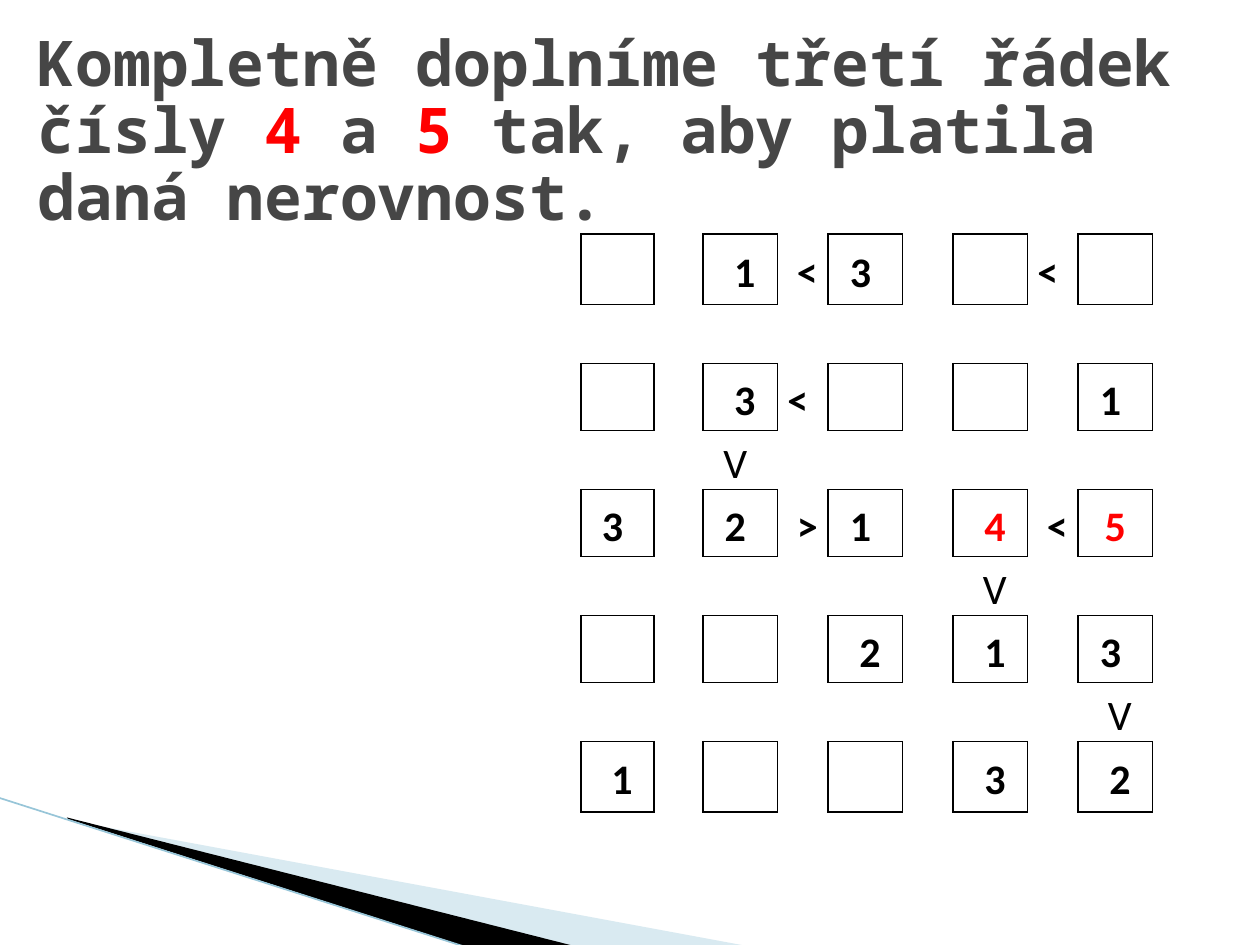
from lxml.etree import SubElement
from pptx import Presentation
from pptx.dml.color import RGBColor
from pptx.enum.shapes import MSO_CONNECTOR as Connector
from pptx.enum.text import MSO_ANCHOR as Anchor, PP_ALIGN as Align
from pptx.oxml.ns import qn
from pptx.util import Cm, Pt

TITLE = [("Kompletně doplníme třetí řádek čísly ", "464646"), ("4", "FF0000"), (" a ", "464646"),
         ("5", "FF0000"), (" tak, aby platila daná nerovnost.", "464646")]
GRID = [
    ["", "", " 1", " <", "3 ", "", "", "< ", ""],
    ["", "", "", "", "", "", "", "", ""],
    ["", "", " 3", "< ", "", "", "", "", "1 "],
    ["", "", "V ", "", "", "", "", "", ""],
    ["3 ", "", "2 ", " >", "1 ", "", " 4", " <", "5"],
    ["", "", "", "", "", "", " V", "", ""],
    ["", "", "", "", " 2", "", " 1", "", "3 "],
    ["", "", "", "", "", "", "", "", " V"],
    [" 1", "", "", "", "", "", " 3", "", " 2"],
]
ADDED = {"4", "5"}
COLUMNS = [1.47, 0.99, 1.5, 1.02, 1.5, 1.02, 1.5, 1.02, 1.5]
ROWS = [1.42, 1.19, 1.35, 1.19, 1.35, 1.19, 1.35, 1.19, 1.42]
WEDGES = [
    ([(1.4, 16.54), (15.11, 19.08), (11.58, 19.08), (1.4, 16.51)], "A0CBDC", 40),
    ([(1.35, 16.48), (11.61, 19.08), (9.45, 19.1), (1.37, 16.51)], "000000", 100),
]
EDGE = (-0.03, 16.08, 9.42, 19.1)
TITLE_FONT = {"name": "Noto Sans Mono", "size": Pt(36), "bold": True}
CELL_FONT = {"name": "Calibri", "size": Pt(24)}
TITLE_FRAME = {"word_wrap": True, "vertical_anchor": Anchor.MIDDLE, "margin_top": Cm(0.38)}
CELL_FORMAT = {"vertical_anchor": Anchor.MIDDLE, "margin_left": Cm(0.18), "margin_right": Cm(0.18),
               "margin_top": 0, "margin_bottom": 0}


def apply(target, values):
    """Set each attribute of the target from a dict."""
    for name, value in values.items():
        setattr(target, name, value)


def paint(color_format, color):
    """Give a colour format a hex colour."""
    color_format.rgb = RGBColor.from_string(color)


def add_wedge(slide, points, color, opacity):
    """Draw one filled corner wedge."""
    corners = [(Cm(x), Cm(y)) for x, y in points]
    builder = slide.shapes.build_freeform(*corners[0], scale=1.0)
    builder.add_line_segments(corners[1:], close=True)
    shape = builder.convert_to_shape()
    shape.shadow.inherit = False
    shape.line.fill.background()
    shape.fill.solid()
    paint(shape.fill.fore_color, color)
    if opacity < 100:
        color_element = shape.fill._xPr.find(f".//{qn('a:srgbClr')}")
        SubElement(color_element, qn("a:alpha"), val=str(opacity * 1000))


def add_edge(slide):
    """Draw the thin line along the wedges."""
    edge = slide.shapes.add_connector(Connector.STRAIGHT, *map(Cm, EDGE))
    edge.line.width = Pt(0.95)
    paint(edge.line.color, "97C5D8")
    SubElement(edge._element.spPr, qn("a:effectLst"))


def add_title(slide):
    """Write the heading with its red numbers."""
    frame = slide.shapes.add_textbox(Cm(0.51), 0, Cm(23.62), Cm(5.13)).text_frame
    apply(frame, TITLE_FRAME)
    paragraph = frame.paragraphs[0]
    paragraph.line_spacing = 0.88
    for text, color in TITLE:
        run = paragraph.add_run()
        run.text = text
        apply(run.font, TITLE_FONT)
        paint(run.font.color, color)


def set_borders(cell, row, column):
    """Outline the number squares on the even rows and columns."""
    properties = cell._tc.get_or_add_tcPr()
    visible = {"L": row % 2 == 0, "R": row % 2 == 0, "T": column % 2 == 0, "B": column % 2 == 0}
    for side, shown in visible.items():
        line = SubElement(properties, qn(f"a:ln{side}"), w=str(Pt(1)))
        fill = SubElement(line, qn("a:solidFill" if shown else "a:noFill"))
        if shown:
            SubElement(fill, qn("a:srgbClr"), val="000000")


def add_grid(slide):
    """Build the puzzle table."""
    table = slide.shapes.add_table(len(ROWS), len(COLUMNS), Cm(11.71), Cm(4.72),
                                   Cm(sum(COLUMNS)), Cm(sum(ROWS))).table
    apply(table, {"first_row": False, "horz_banding": False})
    for column, width in zip(table.columns, COLUMNS):
        column.width = Cm(width)
    for row, height in zip(table.rows, ROWS):
        row.height = Cm(height)
    for row, texts in enumerate(GRID):
        for column, text in enumerate(texts):
            cell = table.cell(row, column)
            apply(cell, CELL_FORMAT)
            set_borders(cell, row, column)
            cell.fill.background()
            cell.text = text
            paragraph = cell.text_frame.paragraphs[0]
            apply(paragraph, {"alignment": Align.CENTER, "line_spacing": 1.15})
            symbol = text.strip()
            for font in [paragraph.font, *(run.font for run in paragraph.runs)]:
                apply(font, {**CELL_FONT, "bold": symbol != "V"})
                paint(font.color, "FF0000" if symbol in ADDED else "000000")


def main():
    """Build and save the slide."""
    presentation = Presentation()
    apply(presentation, {"slide_width": Cm(25.4), "slide_height": Cm(19.05)})
    slide = presentation.slides.add_slide(presentation.slide_layouts[6])
    for wedge in WEDGES:
        add_wedge(slide, *wedge)
    add_edge(slide)
    add_title(slide)
    add_grid(slide)
    presentation.save("out.pptx")


if __name__ == "__main__":
    main()
